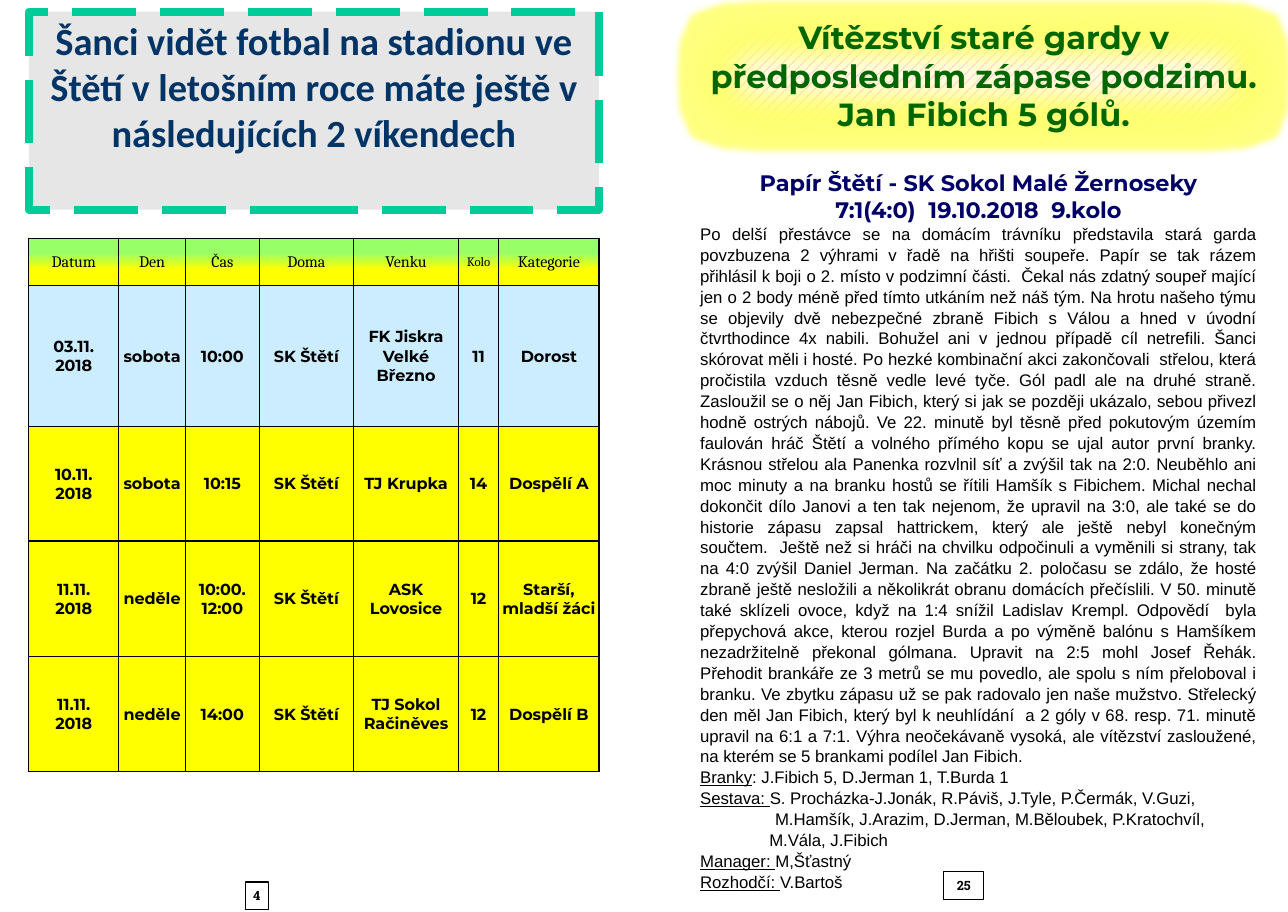
from lxml.etree import SubElement
from pptx import Presentation
from pptx.dml.color import RGBColor
from pptx.enum.dml import MSO_LINE, MSO_PATTERN
from pptx.enum.shapes import MSO_SHAPE
from pptx.enum.text import MSO_ANCHOR, MSO_AUTO_SIZE, PP_ALIGN
from pptx.oxml import parse_xml
from pptx.oxml.ns import nsdecls, qn
from pptx.util import Inches, Pt

INVITATION = "Šanci vidět fotbal na stadionu ve Štětí v letošním roce máte ještě v následujících 2 víkendech"
HEADLINE = "Vítězství staré gardy v předposledním zápase podzimu. Jan Fibich 5 gólů."
FIXTURES = [
    ["Datum", "Den", "Čas", "Doma", "Venku", "Kolo", "Kategorie"],
    ["03.11.\n2018", "sobota", "10:00", "SK Štětí", "FK Jiskra Velké Březno", "11", "Dorost"],
    ["10.11.\n2018", "sobota", "10:15", "SK Štětí", "TJ Krupka", "14", "Dospělí A"],
    ["11.11.\n2018", "neděle", "10:00. 12:00", "SK Štětí", "ASK Lovosice", "12", "Starší, mladší žáci"],
    ["11.11.\n2018", "neděle", "14:00", "SK Štětí", "TJ Sokol Račiněves", "12", "Dospělí B"],
]
MATCH = ["Papír Štětí - SK Sokol Malé Žernoseky", "7:1(4:0)  19.10.2018  9.kolo"]
STORY = [
    "Po delší přestávce se na domácím trávníku představila stará garda povzbuzena 2 výhrami v řadě",
    "na hřišti soupeře. Papír se tak rázem přihlásil k boji o 2. místo v podzimní části.  Čekal nás",
    "zdatný soupeř mající jen o 2 body méně před tímto utkáním než náš tým. Na hrotu našeho týmu se",
    "objevily dvě nebezpečné zbraně Fibich s Válou a hned v úvodní čtvrthodince 4x nabili. Bohužel ani",
    "v jednou případě cíl netrefili. Šanci skórovat měli i hosté. Po hezké kombinační akci zakončovali ",
    "střelou, která pročistila vzduch těsně vedle levé tyče. Gól padl ale na druhé straně. Zasloužil se",
    "o něj Jan Fibich, který si jak se později ukázalo, sebou přivezl hodně ostrých nábojů. Ve 22. minutě",
    "byl těsně před pokutovým územím faulován hráč Štětí a volného přímého kopu se ujal autor první",
    "branky. Krásnou střelou ala Panenka rozvlnil síť a zvýšil tak na 2:0. Neuběhlo ani moc minuty a na",
    "branku hostů se řítili Hamšík s Fibichem. Michal nechal dokončit dílo Janovi a ten tak nejenom, že",
    "upravil na 3:0, ale také se do historie zápasu zapsal hattrickem, který ale ještě nebyl konečným",
    "součtem.  Ještě než si hráči na chvilku odpočinuli a vyměnili si strany, tak na 4:0 zvýšil Daniel",
    "Jerman. Na začátku 2. poločasu se zdálo, že hosté zbraně ještě nesložili a několikrát obranu",
    "domácích přečíslili. V 50. minutě také sklízeli ovoce, když na 1:4 snížil Ladislav Krempl. Odpovědí ",
    "byla přepychová akce, kterou rozjel Burda a po výměně balónu s Hamšíkem nezadržitelně překonal",
    "gólmana. Upravit na 2:5 mohl Josef Řehák. Přehodit brankáře ze 3 metrů se mu povedlo, ale spolu s",
    "ním přeloboval i branku. Ve zbytku zápasu už se pak radovalo jen naše mužstvo. Střelecký den měl",
    "Jan Fibich, který byl k neuhlídání  a 2 góly v 68. resp. 71. minutě upravil na 6:1 a 7:1. Výhra",
    "neočekávaně vysoká, ale vítězství zasloužené, na kterém se 5 brankami podílel Jan Fibich.",
]
REPORT = [
    ("", " ".join(STORY), 0),
    ("Branky", ": J.Fibich 5, D.Jerman 1, T.Burda 1", 0),
    ("Sestava: ", "S. Procházka-J.Jonák, R.Páviš, J.Tyle, P.Čermák, V.Guzi,", 0),
    ("", "M.Hamšík, J.Arazim, D.Jerman, M.Běloubek, P.Kratochvíl,", 0.65),
    ("", "M.Vála, J.Fibich", 0.6),
    ("Manager: ", "M,Šťastný", 0),
    ("Rozhodčí: ", "V.Bartoš", 0),
]
PAGE_NUMBERS = [("4", (2.13, 7.66, 0.2, 0.24)), ("25", (8.19, 7.57, 0.35, 0.24))]

COLUMN_WIDTHS = [0.78, 0.58, 0.64, 0.82, 0.91, 0.35, 0.87]
ROW_HEIGHTS = [0.41, 1.22, 1, 1, 1]
ROW_RULES = [1, 1, 0.5, 1, 0.5, 1]
COLUMN_RULES = [1, 0.5, 0.5, 0.5, 0.5, 0.5, 0.5, 1]

THEME = {
    "colours": {
        "panel": "E6E6E6", "dash": "00CC99", "rule": "000000", "glow": "FFFF00",
        "hatch": "FF99FF", "paper": "FFFFFF", "header": ["99FF66", "FFFF00"],
        "rows": ["CCECFF", "FFFF00", "FFFF00", "FFFF00"],
    },
    "text": {
        "invitation": ({"name": "Calibri", "size": Pt(24), "bold": True}, "003366"),
        "headline": ({"name": "Montserrat", "size": Pt(20), "bold": True}, "006600"),
        "match": ({"name": "Montserrat", "size": Pt(14), "bold": True}, "000066"),
        "report": ({"name": "Arial", "size": Pt(10.5), "bold": False}, "000000"),
        "header": ({"name": "Cambria", "size": Pt(10), "bold": False}, "000000"),
        "small header": ({"name": "Cambria", "size": Pt(8), "bold": False}, "000000"),
        "fixture": ({"name": "Montserrat", "size": Pt(10), "bold": True}, "000000"),
        "page": ({"name": "Roboto Slab", "size": Pt(8), "bold": True}, "000000"),
    },
}
COLOURS = THEME["colours"]


def colour(value):
    return RGBColor.from_string(value)


def assign(target, values):
    for name, value in values.items():
        setattr(target, name, value)


def box(*lengths):
    return dict(zip(("left", "top", "width", "height"), map(Inches, lengths)))


def add_run(paragraph, text, style, underline=False):
    values, font_colour = THEME["text"][style]
    run = paragraph.add_run()
    run.text = text
    assign(run.font, {**values, "underline": underline})
    run.font.color.rgb = colour(font_colour)


def write(text_frame, lines, style):
    for index, line in enumerate(lines):
        paragraph = text_frame.add_paragraph() if index else text_frame.paragraphs[0]
        paragraph.alignment = PP_ALIGN.CENTER
        add_run(paragraph, line, style)


def add_rectangle(slide, place):
    shape = slide.shapes.add_shape(MSO_SHAPE.RECTANGLE, **place)
    shape.shadow.inherit = False
    shape.fill.background()
    shape.line.fill.background()
    return shape


def outline(shape, line_colour, width):
    shape.line.color.rgb = colour(line_colour)
    shape.line.width = Pt(width)


def add_invitation(slide):
    title = slide.shapes.title
    assign(title, box(0.25, 0.1, 4.95, 1.72))
    title.fill.solid()
    title.fill.fore_color.rgb = colour(COLOURS["panel"])
    outline(title, COLOURS["dash"], 5)
    title.line.dash_style = MSO_LINE.LONG_DASH
    frame = {"vertical_anchor": MSO_ANCHOR.TOP, "auto_size": MSO_AUTO_SIZE.NONE, "word_wrap": True}
    assign(title.text_frame, frame)
    write(title.text_frame, [INVITATION], "invitation")
    title.text_frame.paragraphs[0].line_spacing = 1.0


def add_headline(slide):
    shape = add_rectangle(slide, box(5.98, 0.1, 5.12, 1.11))
    shape.fill.patterned()
    shape.fill.pattern = MSO_PATTERN.DASHED_UPWARD_DIAGONAL
    shape.fill.fore_color.rgb = colour(COLOURS["hatch"])
    shape.fill.back_color.rgb = colour(COLOURS["paper"])
    effects = shape.element.spPr.find(qn("a:effectLst"))
    glow = SubElement(effects, qn("a:glow"), rad=str(Pt(8)))
    glow_colour = SubElement(glow, qn("a:srgbClr"), val=COLOURS["glow"])
    SubElement(glow_colour, qn("a:alpha"), val="50000")
    SubElement(effects, qn("a:softEdge"), rad=str(Pt(25)))
    write(shape.text_frame, [HEADLINE], "headline")


def add_borders(cell, widths):
    properties = cell._tc.get_or_add_tcPr()
    for index, (side, width) in enumerate(widths.items()):
        properties.insert(index, parse_xml(
            f'<a:ln{side} {nsdecls("a")} w="{Pt(width)}"><a:solidFill>'
            f'<a:srgbClr val="{COLOURS["rule"]}"/></a:solidFill></a:ln{side}>'))


def fill_cell(cell, row):
    if row:
        cell.fill.solid()
        cell.fill.fore_color.rgb = colour(COLOURS["rows"][row - 1])
        return
    cell.fill.gradient()
    cell.fill.gradient_angle = 270
    for stop, position, value in zip(cell.fill.gradient_stops, (0.31, 0.66), COLOURS["header"]):
        stop.position = position
        stop.color.rgb = colour(value)


def add_fixtures(slide):
    place = box(0.25, 2.07, sum(COLUMN_WIDTHS), sum(ROW_HEIGHTS))
    table = slide.shapes.add_table(len(FIXTURES), len(COLUMN_WIDTHS), **place).table
    assign(table, {"first_row": False, "horz_banding": False})
    for column, width in zip(table.columns, COLUMN_WIDTHS):
        column.width = Inches(width)
    margins = {f"margin_{side}": Inches(0.01) for side in ("left", "top", "right")}
    cell_format = {**margins, "margin_bottom": 0, "vertical_anchor": MSO_ANCHOR.MIDDLE}
    for row, texts in enumerate(FIXTURES):
        table.rows[row].height = Inches(ROW_HEIGHTS[row])
        for column, text in enumerate(texts):
            cell = table.cell(row, column)
            assign(cell, cell_format)
            fill_cell(cell, row)
            add_borders(cell, {"L": COLUMN_RULES[column], "R": COLUMN_RULES[column + 1],
                               "T": ROW_RULES[row], "B": ROW_RULES[row + 1]})
            style = "fixture" if row else "small header" if text == "Kolo" else "header"
            write(cell.text_frame, text.split("\n"), style)


def add_report(slide):
    text_frame = slide.shapes.add_textbox(**box(5.98, 1.42, 5.03, 6.46)).text_frame
    text_frame.word_wrap = True
    write(text_frame, MATCH, "match")
    for label, text, indent in REPORT:
        paragraph = text_frame.add_paragraph()
        assign(paragraph, {"alignment": PP_ALIGN.JUSTIFY, "line_spacing": 1.04})
        paragraph._p.get_or_add_pPr().set("marL", str(Inches(indent)))
        if label:
            add_run(paragraph, label, "report", underline=True)
        add_run(paragraph, text, "report")


def add_page_numbers(slide):
    for number, place in PAGE_NUMBERS:
        shape = add_rectangle(slide, box(*place))
        outline(shape, COLOURS["rule"], 0.75)
        assign(shape.text_frame, {"word_wrap": False, "vertical_anchor": MSO_ANCHOR.MIDDLE})
        write(shape.text_frame, [number], "page")


def main():
    """Build the football bulletin spread and save it."""
    presentation = Presentation()
    assign(presentation, {"slide_width": Inches(11.18), "slide_height": Inches(7.92)})
    slide = presentation.slides.add_slide(presentation.slide_layouts[5])
    for add_part in (add_invitation, add_fixtures, add_report, add_headline, add_page_numbers):
        add_part(slide)
    presentation.save("out.pptx")


if __name__ == "__main__":
    main()
